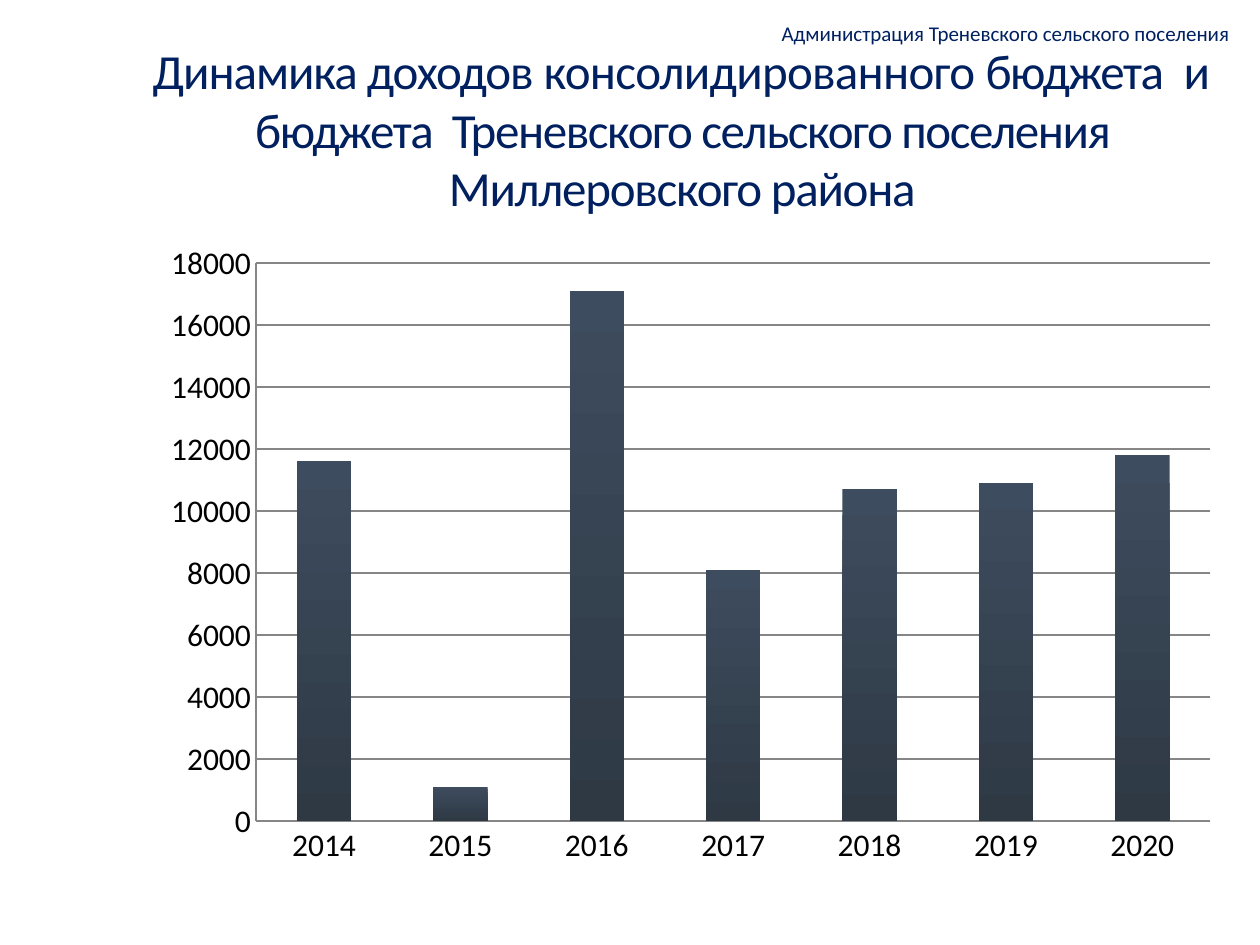
from dataclasses import dataclass

from lxml import etree
from pptx import Presentation
from pptx.chart.data import CategoryChartData
from pptx.dml.color import RGBColor
from pptx.enum.chart import XL_CHART_TYPE, XL_TICK_MARK
from pptx.enum.text import MSO_ANCHOR, MSO_AUTO_SIZE, PP_ALIGN
from pptx.oxml import parse_xml
from pptx.oxml.ns import nsdecls, qn
from pptx.util import Inches, Pt

COLUMN = XL_CHART_TYPE.COLUMN_CLUSTERED
NO_TICK = XL_TICK_MARK.NONE
MIDDLE = MSO_ANCHOR.MIDDLE
NO_FIT = MSO_AUTO_SIZE.NONE
CENTER, RIGHT = PP_ALIGN.CENTER, PP_ALIGN.RIGHT


@dataclass(frozen=True)
class Theme:
    font: str = "Calibri"
    navy: RGBColor = RGBColor(0x00, 0x20, 0x60)
    black: RGBColor = RGBColor(0, 0, 0)
    grid: RGBColor = RGBColor(0x86, 0x86, 0x86)
    bar_top: RGBColor = RGBColor(0x3D, 0x4C, 0x5E)
    bar_base: RGBColor = RGBColor(0x2E, 0x39, 0x44)
    small: Pt = Pt(12)
    label: Pt = Pt(18)
    large: Pt = Pt(28)


THEME = Theme()

# Text and letter spacing in points
TITLE = [
    ("Динамика доходов ", -0.6),
    ("консолидированного ", -0.4),
    ("бюджета  ", -0.8),
    ("и ", 1.1),
    ("бюджета  Треневского сельского поселения ", -0.8),
    ("Миллеровского района", -0.7),
]
INCOME = {
    "2014": 11600, "2015": 1100, "2016": 17100, "2017": 8100,
    "2018": 10700, "2019": 10900, "2020": 11800,
}


def set_font(font, size, color):
    for name, value in {"name": THEME.font, "size": size, "bold": False}.items():
        setattr(font, name, value)
    font.color.rgb = color


def fill_text(shape, runs, size, align, bottom=0):
    """Write runs of (text, letter spacing) as one paragraph."""
    frame = shape.text_frame
    look = {
        "word_wrap": True, "auto_size": NO_FIT, "vertical_anchor": MIDDLE,
        "margin_left": 0, "margin_right": 0, "margin_top": 0,
        "margin_bottom": Inches(bottom),
    }
    for name, value in look.items():
        setattr(frame, name, value)
    para = frame.paragraphs[0]
    para.alignment = align
    para.line_spacing = 1.0
    para.space_before = Pt(0)
    for text, gap in runs:
        run = para.add_run()
        run.text = text
        set_font(run.font, size, THEME.navy)
        if gap:
            run.font._element.set("spc", str(round(gap * 100)))


def add_header(slide):
    box = slide.shapes.add_textbox(
        Inches(3.54), Inches(0.14), Inches(6.22), Inches(0.24))
    fill_text(box, [("Администрация Треневского сельского поселения", 0)],
              THEME.small, RIGHT)


def set_title(slide):
    title = slide.shapes.title
    place = {"left": 1.08, "top": 0.67, "width": 8.67, "height": 1.17}
    for name, value in place.items():
        setattr(title, name, Inches(value))
    fill_text(title, TITLE, THEME.large, CENTER, bottom=0.47)


def place_plot(chart, **area):
    """Fix the inner plot area as fractions of the chart."""
    plot = chart._chartSpace.find(f".//{qn('c:plotArea')}")
    for old in plot.findall(qn("c:layout")):
        plot.remove(old)
    layout = parse_xml(f"<c:layout {nsdecls('c')}><c:manualLayout/></c:layout>")
    values = {"layoutTarget": "inner", "xMode": "edge", "yMode": "edge", **area}
    for name, value in values.items():
        etree.SubElement(layout[0], qn(f"c:{name}")).set("val", str(value))
    plot.insert(0, layout)


def add_income(slide):
    data = CategoryChartData()
    data.categories = list(INCOME)
    data.add_series("Series 1", list(INCOME.values()))
    chart = slide.shapes.add_chart(
        COLUMN, Inches(1.17), Inches(1.83), Inches(8.61), Inches(5.15), data).chart
    chart.has_legend = False
    chart.has_title = False
    set_font(chart.font, THEME.label, THEME.black)
    place_plot(chart, x=0.1, y=0.05, w=0.88, h=0.86)

    plot = chart.plots[0]
    plot.gap_width = 150
    plot.vary_by_categories = False
    fill = plot.series[0].format.fill
    fill.gradient()
    fill.gradient_angle = 270
    for stop, color in zip(fill.gradient_stops, (THEME.bar_top, THEME.bar_base)):
        stop.color.rgb = color

    scale = chart.value_axis
    look = {"minimum_scale": 0, "maximum_scale": 18000, "major_unit": 2000,
            "has_major_gridlines": True}
    for name, value in look.items():
        setattr(scale, name, value)
    for axis in (scale, chart.category_axis):
        axis.major_tick_mark = axis.minor_tick_mark = NO_TICK
    for part in (scale, chart.category_axis, scale.major_gridlines):
        part.format.line.color.rgb = THEME.grid
        part.format.line.width = Pt(0.75)


def main():
    deck = Presentation()
    deck.slide_width, deck.slide_height = Inches(10), Inches(7.5)
    slide = deck.slides.add_slide(deck.slide_layouts[5])
    add_header(slide)
    set_title(slide)
    add_income(slide)
    deck.save("out.pptx")


if __name__ == "__main__":
    main()
